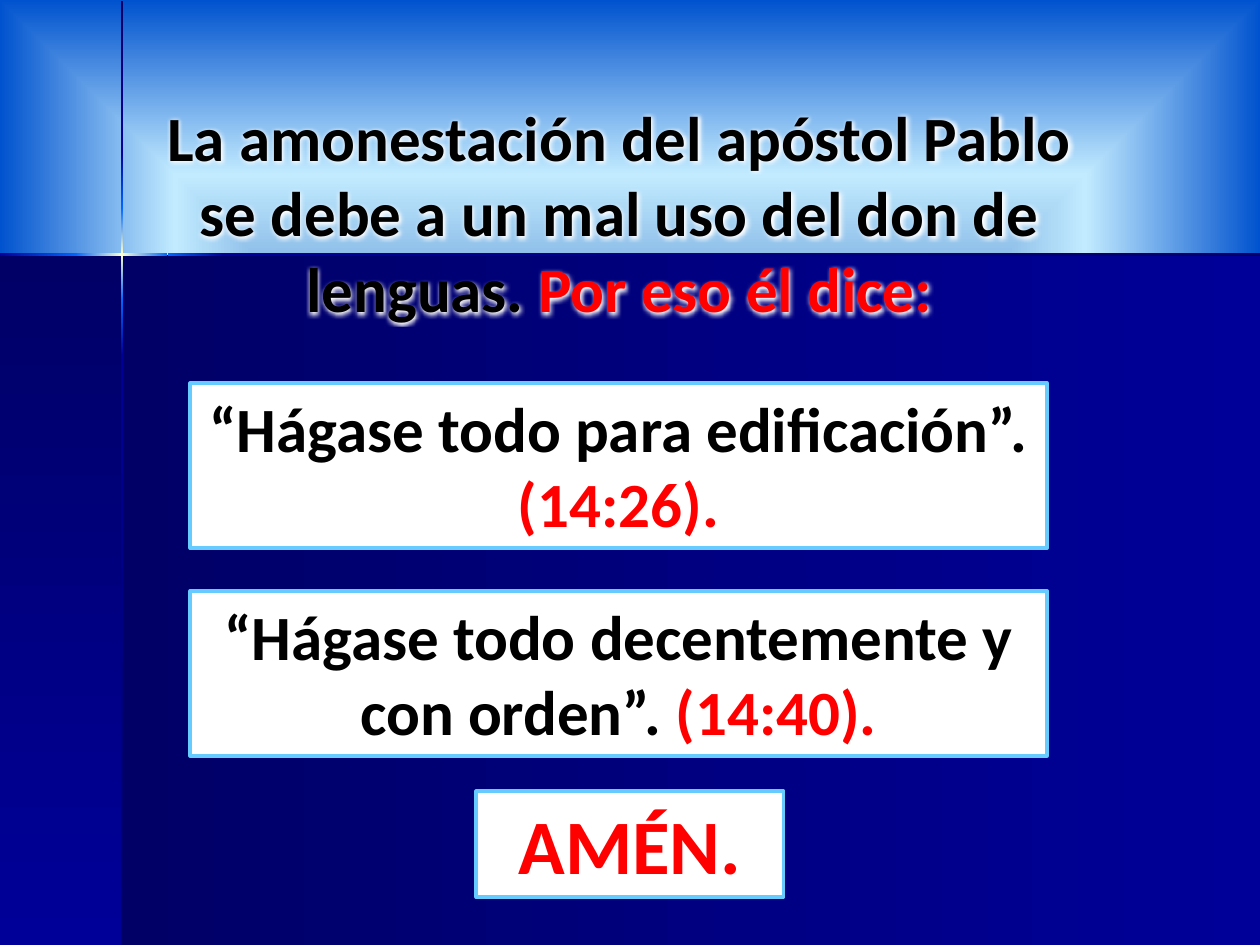
from dataclasses import dataclass

from lxml.etree import SubElement
from pptx import Presentation
from pptx.dml.color import RGBColor
from pptx.enum.shapes import MSO_SHAPE
from pptx.enum.text import MSO_AUTO_SIZE, MSO_ANCHOR, PP_ALIGN
from pptx.oxml.ns import qn
from pptx.util import Inches, Pt


@dataclass(frozen=True)
class Theme:
    """Colours, font and type sizes of the slide."""
    font: str = "Calibri"
    body: int = 36
    closing: int = 44
    ink: str = "000000"
    accent: str = "FF0000"
    paper: str = "FFFFFF"
    border: str = "66CCFF"
    deep: str = "000066"
    navy: str = "000099"
    bright: str = "0066FF"
    spark: str = "FFFFCC"
    sky: tuple = ((0, "0045AD"), (63, "C2EBFF"), (100, "0052CE"))


def add_node(parent, tag, **attributes):
    """Append a drawing element with the given attributes."""
    return SubElement(parent, qn(tag), {key: str(value) for key, value in attributes.items()})


def set_gradient(owner, fill, stops, angle=None):
    """Give a fill linear stops at an angle, or rectangular ones without it."""
    fill.gradient()
    gradient = owner.find(".//" + qn("a:gradFill"))
    for child in list(gradient):
        gradient.remove(child)
    stop_list = add_node(gradient, "a:gsLst")
    for position, color in stops:
        stop = add_node(stop_list, "a:gs", pos=position * 1000)
        add_node(stop, "a:srgbClr", val=color)
    if angle is None:
        route = add_node(gradient, "a:path", path="rect")
        add_node(route, "a:fillToRect", l=50000, t=50000, r=50000, b=50000)
    else:
        add_node(gradient, "a:lin", ang=angle * 60000, scaled=0)


def add_span(para, text, *, font, size, color, glow=None):
    """Add a bold run of text in the given format."""
    span = para.add_run()
    span.text = text
    span.font.bold = True
    span.font.size = Pt(size)
    span.font.color.rgb = RGBColor.from_string(color)
    if glow:
        effects = add_node(span.font._element, "a:effectLst")
        halo = add_node(effects, "a:glow", rad=Pt(5))
        add_node(halo, "a:srgbClr", val=glow)
    span.font.name = font


class SlideBuilder:
    """Holds the theme and the current slide."""

    def __init__(self, page, theme):
        """Keep the slide and its theme."""
        self.page = page
        self.theme = theme

    def background(self, stops):
        """Fill the slide background with a rectangular gradient."""
        set_gradient(self.page.element, self.page.background.fill, stops)

    def rectangle(self, left, top, width, height):
        """Add a plain rectangle without shadow or line."""
        box = self.page.shapes.add_shape(
            MSO_SHAPE.RECTANGLE, Inches(left), Inches(top), Inches(width), Inches(height))
        box.shadow.inherit = False
        box.line.fill.background()
        return box

    def band(self, left, top, width, height, colors, angle):
        """Add a rectangle with evenly spaced gradient colours."""
        box = self.rectangle(left, top, width, height)
        last = len(colors) - 1
        stops = [(100 * index // last, color) for index, color in enumerate(colors)]
        set_gradient(box.element, box.fill, stops, angle)

    def fill_text(self, box, paragraphs, size, glow=None):
        """Set centred paragraphs of text and colour pairs."""
        frame = box.text_frame
        frame.word_wrap = True
        frame.auto_size = MSO_AUTO_SIZE.SHAPE_TO_FIT_TEXT
        frame.vertical_anchor = MSO_ANCHOR.TOP
        for index, spans in enumerate(paragraphs):
            para = frame.add_paragraph() if index else frame.paragraphs[0]
            para.alignment = PP_ALIGN.CENTER
            for text, color in spans:
                add_span(para, text, font=self.theme.font, size=size, color=color, glow=glow)

    def heading(self, left, top, width, height, paragraphs):
        """Add the glowing heading."""
        box = self.page.shapes.add_textbox(
            Inches(left), Inches(top), Inches(width), Inches(height))
        self.fill_text(box, paragraphs, self.theme.body, self.theme.paper)

    def card(self, left, top, width, height, paragraphs, size):
        """Add a white bordered card with text."""
        box = self.rectangle(left, top, width, height)
        box.fill.solid()
        box.fill.fore_color.rgb = RGBColor.from_string(self.theme.paper)
        box.line.color.rgb = RGBColor.from_string(self.theme.border)
        box.line.width = Pt(2)
        self.fill_text(box, paragraphs, size)


def main():
    """Build and save the slide."""
    theme = Theme()
    deck = Presentation()
    deck.slide_width, deck.slide_height = Inches(10), Inches(7.5)
    builder = SlideBuilder(deck.slides.add_slide(deck.slide_layouts[6]), theme)
    builder.background(theme.sky)

    fall = (theme.deep, theme.navy)
    rise = fall[::-1]
    fade_in = (theme.navy, theme.bright)
    fade_out = fade_in[::-1]
    flare = (theme.bright, theme.spark, theme.bright)

    builder.band(0.97, 2.02, 9.03, 5.48, fall, 0)
    builder.band(0, 2.02, 0.97, 5.48, fall, 90)
    for top, height, colors in (
        (0.01, 1.2, fall), (2.82, 4.68, rise), (2.38, 0.44, fade_out),
        (1.21, 0.44, fade_in), (1.65, 0.73, flare),
    ):
        builder.band(0.96, top, 0.02, height, colors, 90)
    for left, width, colors in (
        (1.77, 8.23, rise), (0, 0.61, fade_in), (1.33, 0.44, fade_out), (0.6, 0.73, flare),
    ):
        builder.band(left, 2.01, width, 0.02, colors, 0)

    builder.heading(1.09, 0.73, 7.65, 1.92, [[
        ("La amonestación del apóstol Pablo se debe a un mal uso del don de lenguas. ", theme.ink),
        ("Por eso él dice:", theme.accent),
    ]])
    quotes = (
        [[("“Hágase todo para edificación”. ", theme.ink)], [("(14:26).", theme.accent)]],
        [[("“Hágase todo decentemente y con orden”. ", theme.ink), ("(14:40).", theme.accent)]],
    )
    for index, quote in enumerate(quotes):
        builder.card(1.51, 3.04 + 1.65 * index, 6.8, 1.31, quote, theme.body)
    builder.card(3.78, 6.28, 2.44, 0.84, [[("AMÉN.", theme.accent)]], theme.closing)
    deck.save("out.pptx")


if __name__ == "__main__":
    main()
